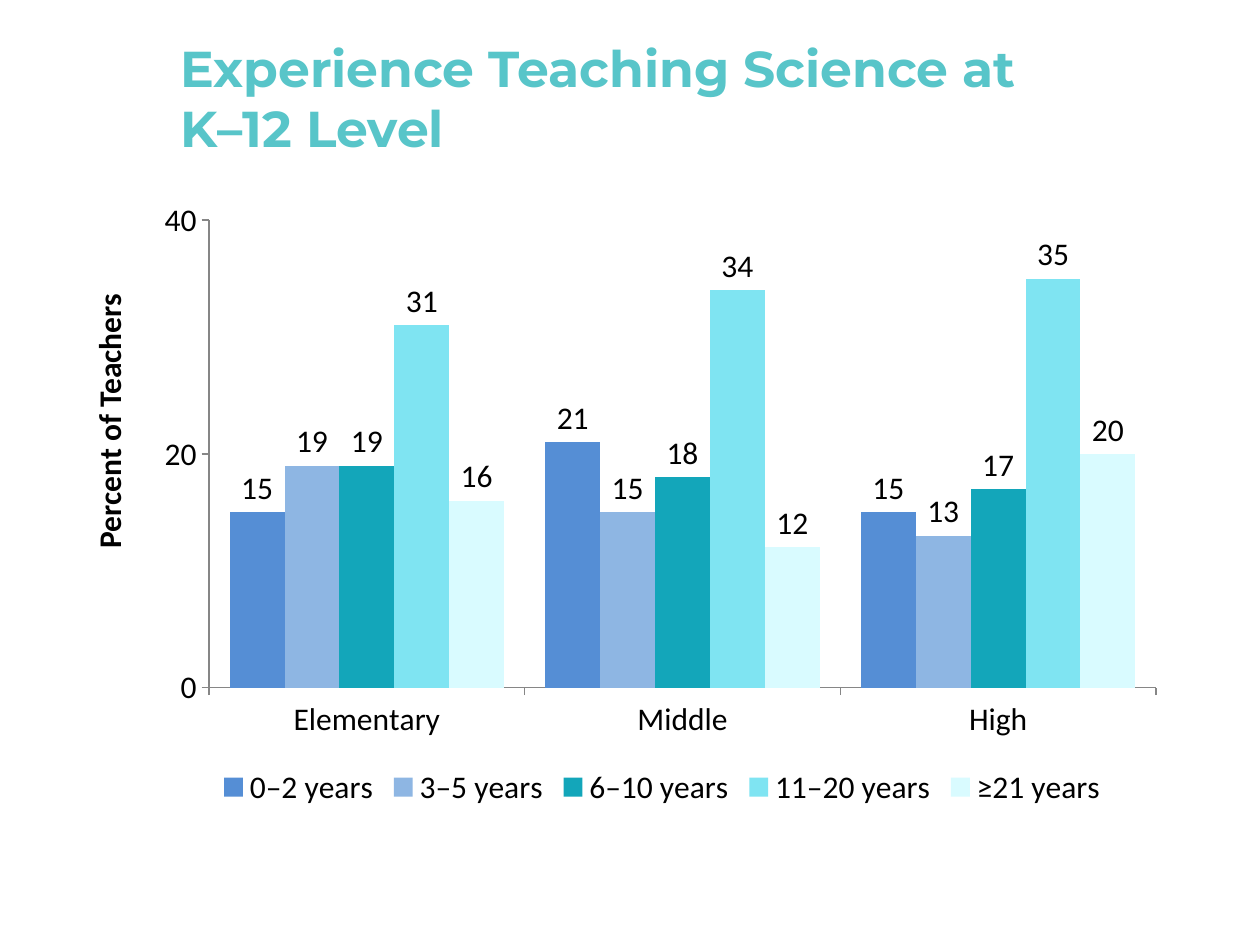
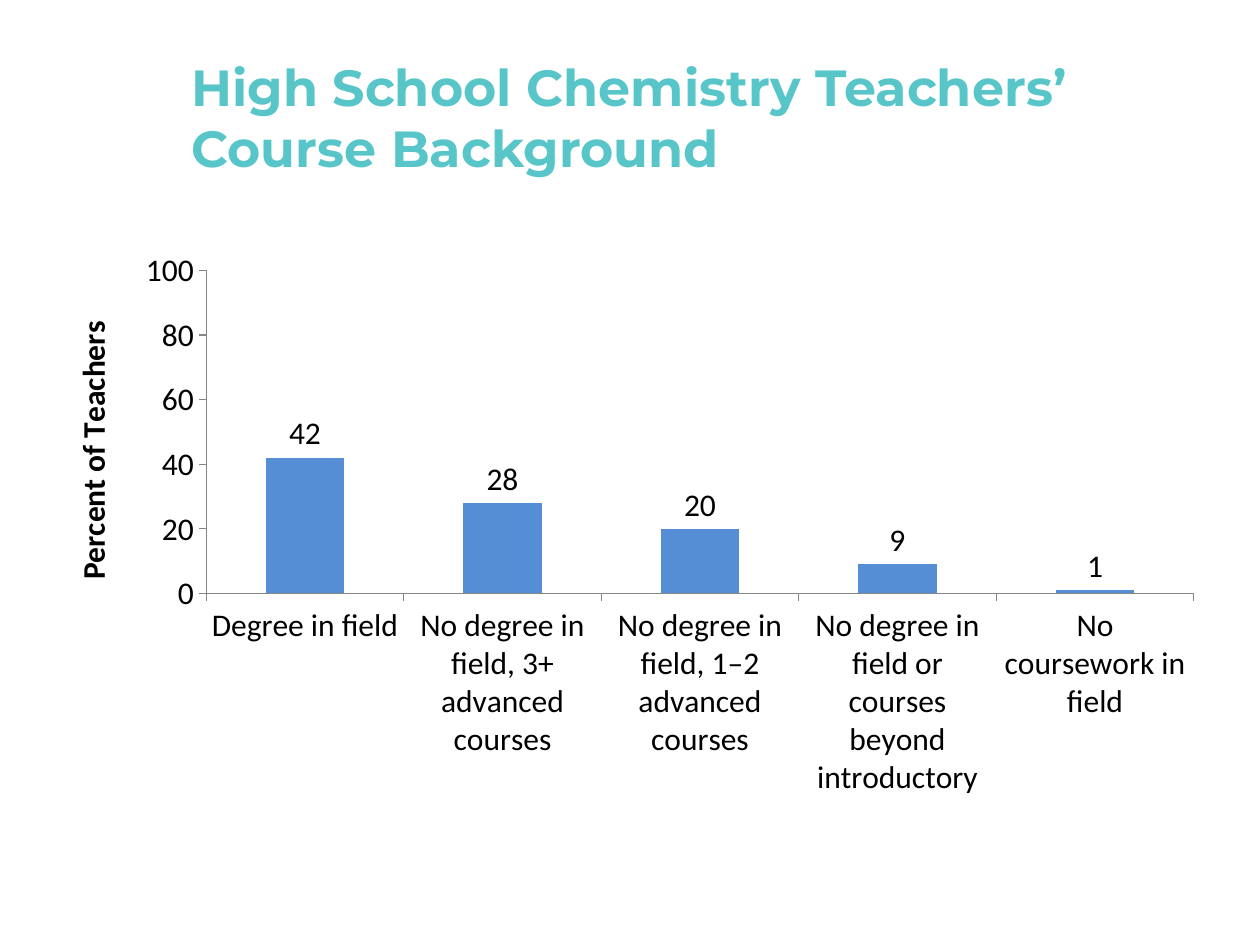
from lxml.etree import SubElement
from pptx import Presentation
from pptx.chart.data import CategoryChartData
from pptx.dml.color import RGBColor
from pptx.enum.chart import (XL_CHART_TYPE, XL_LABEL_POSITION,
                             XL_LEGEND_POSITION, XL_TICK_MARK)
from pptx.enum.text import MSO_ANCHOR, PP_ALIGN
from pptx.oxml import parse_xml
from pptx.oxml.ns import nsdecls, qn
from pptx.util import Cm, Pt

TEAL = RGBColor(0x58, 0xC5, 0xC9)
BLACK = RGBColor(0, 0, 0)
GRAY = RGBColor(0x86, 0x86, 0x86)
BLUE = RGBColor(0x55, 0x8E, 0xD5)
SHADES = [BLUE, RGBColor(0x8E, 0xB6, 0xE3), RGBColor(0x13, 0xA6, 0xBA),
          RGBColor(0x7F, 0xE4, 0xF2), RGBColor(0xD9, 0xFB, 0xFF)]
HEAD_FONT = "Montserrat"
BODY_FONT = "Calibri"
BODY_SIZE = 18
AXIS_NAME = "Percent of Teachers"

LEVELS = ["Elementary", "Middle", "High"]
YEARS = {
    "0–2 years": [15, 21, 15],
    "3–5 years": [19, 15, 13],
    "6–10 years": [19, 18, 17],
    "11–20 years": [31, 34, 35],
    "≥21 years": [16, 12, 20],
}
COURSES = {
    "Degree in field": 42,
    "No degree in field, 3+ advanced courses": 28,
    "No degree in field, 1–2 advanced courses": 20,
    "No degree in field or courses beyond introductory": 9,
    "No coursework in field": 1,
}


def style(font, name, size, color, bold=False):
    font.name, font.size, font.bold = name, Pt(size), bold
    font.color.rgb = color


def add_text(slide, text, box, wrap=True):
    """Add a text box; return it with its only paragraph."""
    shape = slide.shapes.add_textbox(*map(Cm, box))
    frame = shape.text_frame
    frame.word_wrap = wrap
    frame.vertical_anchor = MSO_ANCHOR.MIDDLE
    frame.text = text
    return shape, frame.paragraphs[0]


def add_title(slide, text, box, size):
    para = add_text(slide, text, box)[1]
    style(para.font, HEAD_FONT, size, TEAL, True)


def add_side_label(slide, text, box):
    """Add a label that reads from bottom to top."""
    shape, para = add_text(slide, text, box, wrap=False)
    shape.rotation = 270
    para.alignment = PP_ALIGN.CENTER
    style(para.font, BODY_FONT, BODY_SIZE, BLACK, True)


def pin(part, **place):
    """Fix a chart part at x, y (and w, h) as shares of the chart."""
    layout = part.find(qn("c:layout"))
    if layout is None:
        layout = parse_xml(f"<c:layout {nsdecls('c')}/>")
        part.insert(0, layout)
    manual = SubElement(layout, qn("c:manualLayout"))
    if "w" in place:
        SubElement(manual, qn("c:layoutTarget")).set("val", "inner")
    for side in "xy":
        SubElement(manual, qn(f"c:{side}Mode")).set("val", "edge")
    for side, share in place.items():
        SubElement(manual, qn(f"c:{side}")).set("val", str(share))


def style_axes(chart, top):
    for axis in (chart.category_axis, chart.value_axis):
        axis.has_major_gridlines = False
        axis.major_tick_mark = XL_TICK_MARK.OUTSIDE
        axis.minor_tick_mark = XL_TICK_MARK.NONE
        axis.format.line.color.rgb = GRAY
        axis.format.line.width = Pt(0.75)
    scale = chart.value_axis
    scale.minimum_scale, scale.maximum_scale = 0, top
    scale.major_unit = 20


def add_columns(slide, names, series, box, top, gap, plot_area):
    """Add a column chart with a value above each bar."""
    data = CategoryChartData(number_format="0")
    data.categories = names
    for name, values in series.items():
        data.add_series(name, values)
    chart = slide.shapes.add_chart(
        XL_CHART_TYPE.COLUMN_CLUSTERED, *map(Cm, box), data).chart
    chart.has_title = False
    chart.has_legend = False
    style(chart.font, BODY_FONT, BODY_SIZE, BLACK)
    style_axes(chart, top)
    plot = chart.plots[0]
    plot.gap_width, plot.overlap = gap, 0
    plot.vary_by_categories = False
    plot.has_data_labels = True
    plot.data_labels.show_value = True
    plot.data_labels.position = XL_LABEL_POSITION.OUTSIDE_END
    for bars, color in zip(plot.series, SHADES):
        bars.format.fill.solid()
        bars.format.fill.fore_color.rgb = color
        bars.invert_if_negative = False
    pin(chart.element.find(".//" + qn("c:plotArea")), **plot_area)
    return chart


def add_legend(chart):
    chart.has_legend = True
    chart.legend.position = XL_LEGEND_POSITION.BOTTOM
    chart.legend.include_in_layout = False


def name_axis(axis, text, x, y):
    title = axis.axis_title
    title.text_frame.text = text
    style(title.text_frame.paragraphs[0].font,
          BODY_FONT, BODY_SIZE, BLACK, True)
    pin(title.element if hasattr(title, "element") else title._element,
        x=x, y=y)


def build_years(slide):
    add_title(slide, "Experience Teaching Science at\vK–12 Level",
              (3.38, 0.76, 20.75, 2.41), 28.8)
    chart = add_columns(slide, LEVELS, YEARS, (2.97, 3.81, 20.75, 12.57),
                        40, 75, dict(x=0.06, y=0.05, w=0.92, h=0.75))
    add_legend(chart)
    add_side_label(slide, AXIS_NAME, (-0.64, 7.98, 5.66, 1.02))


def build_courses(slide):
    add_title(slide, "High School Chemistry Teachers’ Course Background",
              (3.61, 0.76, 20.52, 3.18), 29)
    chart = add_columns(slide, list(COURSES),
                        {"Series 1": list(COURSES.values())},
                        (0.84, 4.88, 23.7, 11.43), 100, 151,
                        dict(x=0.14, y=0.05, w=0.84, h=0.57))
    name_axis(chart.value_axis, AXIS_NAME, 0.02, 0.13)


def main():
    deck = Presentation()
    deck.slide_width, deck.slide_height = Cm(25.4), Cm(19.05)
    for build in (build_years, build_courses):
        build(deck.slides.add_slide(deck.slide_layouts[6]))
    deck.save("out.pptx")


if __name__ == "__main__":
    main()
